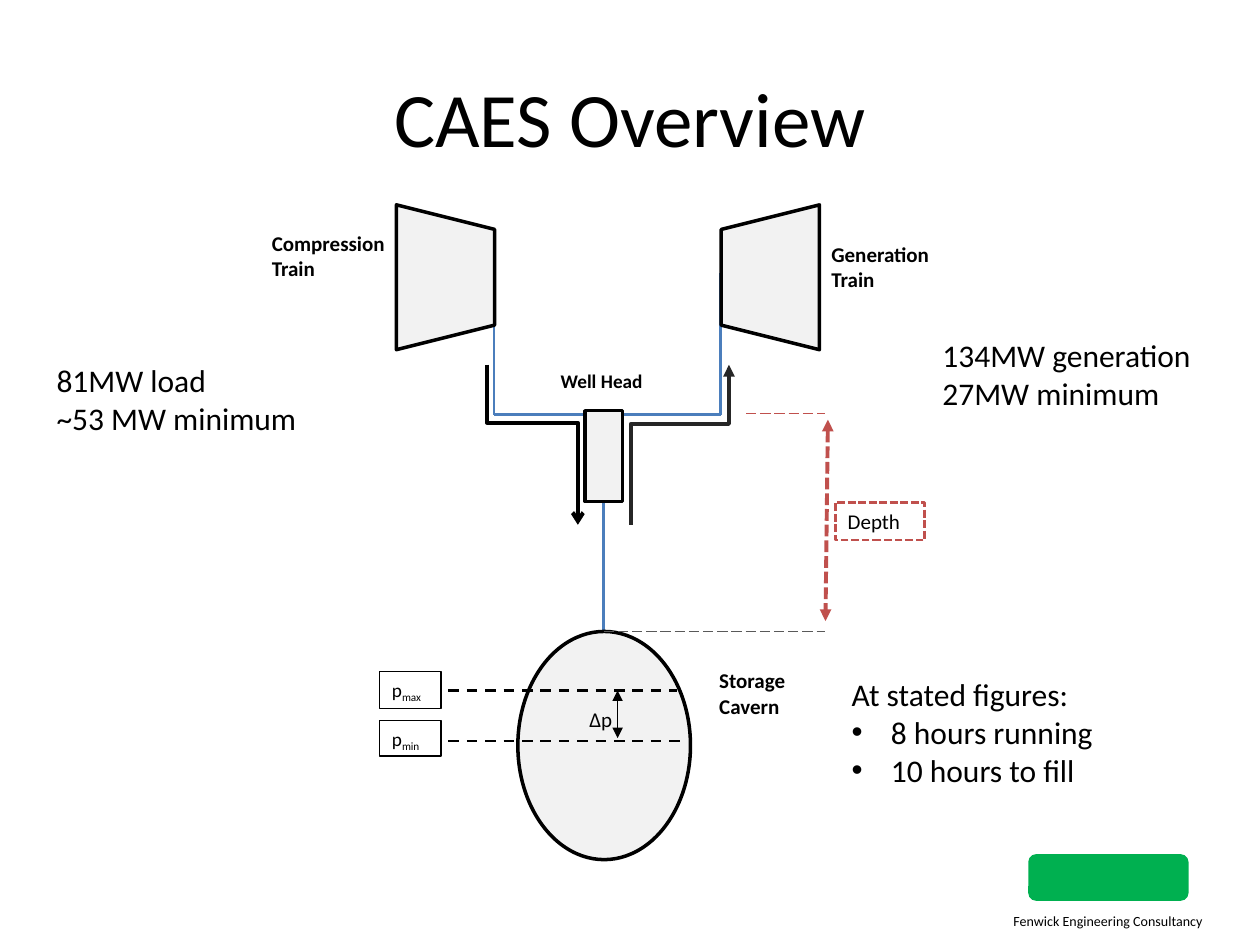
from lxml import etree
from pptx import Presentation
from pptx import util as u
from pptx.dml.color import RGBColor
from pptx.enum import dml, shapes, text
from pptx.oxml.ns import qn

BLACK, GREY, RED, BLUE = "000000", "F2F2F2", "C0504D", "4B7EBC"
DASH = dml.MSO_LINE.DASH
LONG_DASH = dml.MSO_LINE.LONG_DASH
SHORT_DASH = dml.MSO_LINE.SQUARE_DOT


def paint(target, color):
    if hasattr(target, "solid"):
        target.solid()
        target.fore_color.rgb = RGBColor.from_string(color)
    else:
        target.rgb = RGBColor.from_string(color)


def add_line(kind, points, color, width, dash=None, head=None, tail=None):
    connector = slide.shapes.add_connector(kind, *[u.Cm(value) for value in points])
    paint(connector.line.fill, color)
    connector.line.width = u.Pt(width)
    if dash:
        connector.line.dash_style = dash
    properties = connector._element.spPr
    for tag, arrow in (("a:headEnd", head), ("a:tailEnd", tail)):
        if arrow:
            etree.SubElement(properties.find(qn("a:ln")), qn(tag), type=arrow)
    etree.SubElement(properties, qn("a:effectLst"))
    return connector


presentation = Presentation()
presentation.slide_width = u.Cm(25.4)
presentation.slide_height = u.Cm(19.05)
slide = presentation.slides.add_slide(presentation.slide_layouts[5])

title = slide.shapes.title
title.left, title.top, title.width, title.height = u.Cm(1.27), u.Cm(0.76), u.Cm(22.86), u.Cm(3.18)
title.text_frame.text = "CAES Overview"
title.text_frame.vertical_anchor = text.MSO_ANCHOR.MIDDLE
title_paragraph = title.text_frame.paragraphs[0]
title_paragraph.alignment = text.PP_ALIGN.CENTER
title_paragraph.runs[0].font.size = u.Pt(44)
title_paragraph.runs[0].font.name = "Calibri"
paint(title_paragraph.runs[0].font.color, BLACK)

STRAIGHT = shapes.MSO_CONNECTOR.STRAIGHT
pipes = [
    (12.17, 10.11, 12.17, 12.73),
    (9.96, 5.51, 9.96, 8.36),
    (14.53, 5.51, 14.53, 8.36),
    (9.96, 8.36, 14.53, 8.36),
]
for points in pipes:
    add_line(STRAIGHT, points, BLUE, 1.5)

equipment = [
    (shapes.MSO_SHAPE.OVAL, 10.44, 12.73, 3.48, 4.6, 0),
    (shapes.MSO_SHAPE.RECTANGLE, 11.79, 8.28, 0.76, 1.83, 0),
    (shapes.MSO_SHAPE.TRAPEZOID, 7.52, 4.6, 2.92, 1.98, 90),
    (shapes.MSO_SHAPE.TRAPEZOID, 14.07, 4.6, 2.92, 1.98, 270),
]
for kind, left, top, width, height, rotation in equipment:
    shape = slide.shapes.add_shape(kind, u.Cm(left), u.Cm(top), u.Cm(width), u.Cm(height))
    shape.rotation = rotation
    shape.shadow.inherit = False
    paint(shape.fill, GREY)
    paint(shape.line.fill, BLACK)
    shape.line.width = u.Pt(2)

ELBOW = shapes.MSO_CONNECTOR.ELBOW
flows = [
    ((12.09, 7.98, 15.32, 9.96), "262626", "triangle", None, 90, 36900),
    ((12.35, 8.05, 9.12, 9.88), BLACK, None, "arrow", 270, 36300),
]
for points, color, head, tail, rotation, bend in flows:
    flow = add_line(ELBOW, points, color, 2.25, head=head, tail=tail)
    properties = flow._element.spPr
    properties.find(qn("a:xfrm")).set("rot", str(rotation * 60000))
    geometry = properties.find(qn("a:prstGeom"))
    adjustments = geometry.find(qn("a:avLst"))
    etree.SubElement(adjustments, qn("a:gd"), name="adj1", fmla=f"val {bend}")

measures = [
    ((9.04, 13.92, 13.64, 13.92), BLACK, 1.5, DASH, None),
    ((9.04, 14.94, 13.84, 14.94), BLACK, 1.5, DASH, None),
    ((12.45, 13.92, 12.45, 14.88), BLACK, 0.75, None, "triangle"),
    ((16.69, 8.46, 16.64, 12.52), RED, 2.25, SHORT_DASH, "triangle"),
    ((15.04, 8.33, 16.64, 8.33), RED, 0.75, LONG_DASH, None),
    ((12.17, 12.73, 16.64, 12.73), "595959", 0.75, LONG_DASH, None),
]
for points, color, width, dash, arrow in measures:
    add_line(STRAIGHT, points, color, width, dash, arrow, arrow)

labels = [
    ("Compression Train", 5.23, 4.52, 3.2, 1.27, 12, True, None),
    ("Generation Train", 16.51, 4.75, 2.74, 1.27, 12, True, None),
    ("Well Head", 11.05, 7.32, 2.59, 0.74, 11, True, None),
    ("Storage Cavern", 14.25, 13.34, 1.98, 1.27, 12, True, None),
    ("Depth", 16.84, 10.13, 1.8, 0.76, 12, False, (RED, 1.5, SHORT_DASH)),
    ("p_max", 7.65, 13.54, 1.24, 0.74, 11, False, (BLACK, 0.75, None)),
    ("p_min", 7.65, 14.53, 1.24, 0.71, 11, False, (BLACK, 0.75, None)),
    ("Δp", 11.63, 14.12, 1.19, 0.76, 12, False, None),
    ("81MW load\n~53 MW minimum", 0.89, 7.16, 5.94, 1.8, 18, False, None),
    ("134MW generation\n27MW minimum", 18.75, 6.65, 5.94, 1.8, 18, False, None),
    ("At stated figures:\n•8 hours running\n•10 hours to fill", 16.92, 13.49, 8.26, 2.57, 18, False, None),
    ("Fenwick Engineering Consultancy", 19.51, 18.29, 5.66, 0.64, 8, False, None),
]
for wording, left, top, width, height, size, bold, border in labels:
    label = slide.shapes.add_textbox(u.Cm(left), u.Cm(top), u.Cm(width), u.Cm(height))
    frame = label.text_frame
    frame.word_wrap = True
    if border:
        color, line_width, dash = border
        paint(label.line.fill, color)
        label.line.width = u.Pt(line_width)
        label.line.dash_style = dash
    for index, row in enumerate(wording.split("\n")):
        paragraph = frame.add_paragraph() if index else frame.paragraphs[0]
        base, _, subscript = row.partition("_")
        paragraph.text = base.lstrip("•")
        if subscript:
            run = paragraph.add_run()
            run.text = subscript
            run.font._element.set("baseline", "-25000")
        if row.startswith("•"):
            properties = paragraph._p.get_or_add_pPr()
            properties.set("marL", str(u.Cm(0.79)))
            properties.set("indent", str(u.Cm(-0.79)))
            etree.SubElement(properties, qn("a:buFont"), typeface="Arial")
            etree.SubElement(properties, qn("a:buChar"), char="•")
        for run in paragraph.runs:
            run.font.name = "Calibri"
            run.font.size = u.Pt(size)
            run.font.bold = bold
            paint(run.font.color, BLACK)

caption = label.text_frame
caption.margin_left = caption.margin_right = caption.margin_top = caption.margin_bottom = u.Cm(0.1)
caption.paragraphs[0].alignment = text.PP_ALIGN.CENTER

emblem = slide.shapes.add_shape(
    shapes.MSO_SHAPE.ROUNDED_RECTANGLE, u.Cm(20.73), u.Cm(17.22), u.Cm(3.23), u.Cm(0.94)
)
emblem.shadow.inherit = False
paint(emblem.fill, "00B050")
emblem.line.fill.background()

presentation.save("out.pptx")
